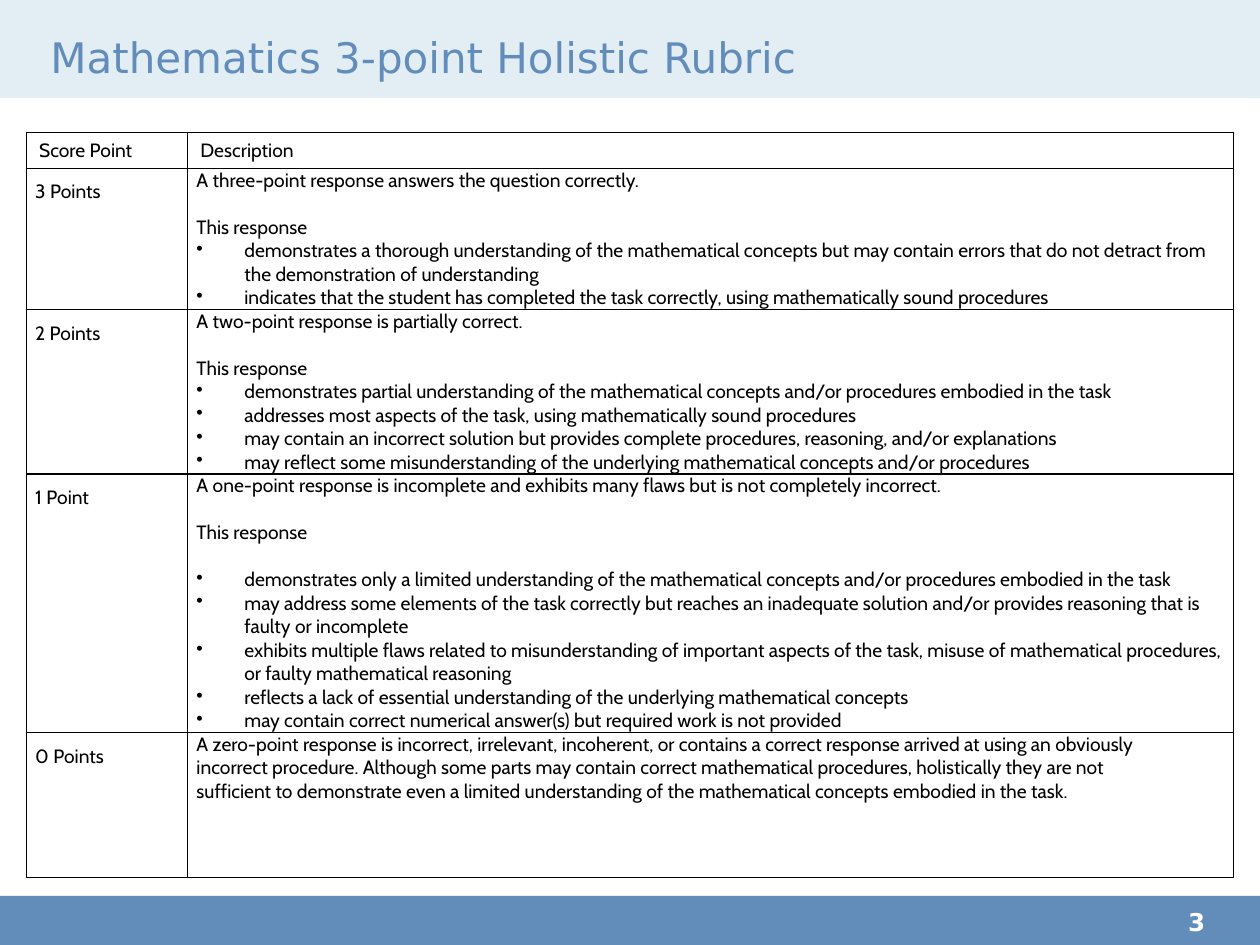
from lxml.etree import SubElement
from pptx import Presentation
from pptx.dml.color import RGBColor
from pptx.enum.shapes import MSO_SHAPE
from pptx.enum.text import MSO_ANCHOR as Anchor, PP_ALIGN as Align
from pptx.oxml.ns import qn
from pptx.util import Inches, Pt

BLUE = RGBColor(0x62, 0x8D, 0xBB)
PALE = RGBColor(0xE3, 0xED, 0xF4)
WHITE = RGBColor(0xFF, 0xFF, 0xFF)
BLACK = RGBColor(0x00, 0x00, 0x00)

COLUMN_WIDTHS = [12.8, 83]
ROW_HEIGHTS = [2.8, 11.1, 12.9, 19.6, 11.5]
HEADINGS = ["Score Point", "Description"]
LEAD_IN = "This response"
LEVELS = [
    ("3 Points", "A three-point response answers the question correctly.", False, [
        "demonstrates a thorough understanding of the mathematical concepts but may contain errors "
        "that do not detract from the demonstration of understanding",
        "indicates that the student has completed the task correctly, using mathematically sound procedures",
    ]),
    ("2 Points", "A two-point response is partially correct.", False, [
        "demonstrates partial understanding of the mathematical concepts and/or procedures embodied in the task",
        "addresses most aspects of the task, using mathematically sound procedures",
        "may contain an incorrect solution but provides complete procedures, reasoning, and/or explanations",
        "may reflect some misunderstanding of the underlying mathematical concepts and/or procedures",
    ]),
    ("1 Point", "A one-point response is incomplete and exhibits many flaws but is not completely incorrect.", True, [
        "demonstrates only a limited understanding of the mathematical concepts and/or procedures "
        "embodied in the task",
        "may address some elements of the task correctly but reaches an inadequate solution and/or "
        "provides reasoning that is faulty or incomplete",
        "exhibits multiple flaws related to misunderstanding of important aspects of the task, misuse "
        "of mathematical procedures, or faulty mathematical reasoning",
        "reflects a lack of essential understanding of the underlying mathematical concepts",
        "may contain correct numerical answer(s) but required work is not provided",
    ]),
]
ZERO_LINES = [
    "A zero-point response is incorrect, irrelevant, incoherent, or contains a correct response "
    "arrived at using an obviously",
    "incorrect procedure. Although some parts may contain correct mathematical procedures, "
    "holistically they are not",
    "sufficient to demonstrate even a limited understanding of the mathematical concepts "
    "embodied in the task.",
]


class RubricSlide:
    """Draws a scoring rubric on a grid of 100 columns by 75 rows."""

    title_font, body_font = "DejaVu Sans", "Cabin"
    body_size, blank_line, hang = 11, 13.4, 3.8

    def __init__(self, presentation):
        self.unit = presentation.slide_width / 100
        self.slide = presentation.slides.add_slide(presentation.slide_layouts[5])
        self.shapes = self.slide.shapes

    def grid(self, *lengths):
        return [round(length * self.unit) for length in lengths]

    def style(self, paragraph, font, size, color, bold=False):
        paragraph.font.name = font
        paragraph.font.size = Pt(size)
        paragraph.font.color.rgb = color
        paragraph.font.bold = bold

    def inset(self, target, left, top, right, bottom):
        (target.margin_left, target.margin_top,
         target.margin_right, target.margin_bottom) = self.grid(left, top, right, bottom)

    def band(self, top, height, color):
        shape = self.shapes.add_shape(MSO_SHAPE.RECTANGLE, *self.grid(0, top, 100, height))
        shape.shadow.inherit = False
        shape.fill.solid()
        shape.fill.fore_color.rgb = color
        shape.line.fill.background()

    def title(self, text, *box):
        shape = self.shapes.title
        self.shapes._spTree.append(shape._element)
        shape.left, shape.top, shape.width, shape.height = self.grid(*box)
        frame = shape.text_frame
        frame.text = text
        frame.vertical_anchor = Anchor.MIDDLE
        self.inset(frame, 0, 0, 1, 0.5)
        paragraph = frame.paragraphs[0]
        paragraph.alignment = Align.LEFT
        self.style(paragraph, self.title_font, 24, BLUE)

    def page_number(self, text, *box):
        frame = self.shapes.add_textbox(*self.grid(*box)).text_frame
        frame.word_wrap = True
        self.inset(frame, 0, 0, 0, 0)
        frame.text = text
        self.style(frame.paragraphs[0], self.title_font, 14, WHITE, True)

    def table(self, left, top):
        box = self.grid(left, top, sum(COLUMN_WIDTHS), sum(ROW_HEIGHTS))
        table = self.shapes.add_table(len(ROW_HEIGHTS), len(COLUMN_WIDTHS), *box).table
        table.first_row = table.horz_banding = False
        for column, width in zip(table.columns, self.grid(*COLUMN_WIDTHS)):
            column.width = width
        for row, height in zip(table.rows, self.grid(*ROW_HEIGHTS)):
            row.height = height
        for cell in table.iter_cells():
            self.borders(cell)
            cell.fill.background()
            self.inset(cell, 0.7, 0, 0.7, 0)
        return table

    def borders(self, cell):
        properties = cell._tc.get_or_add_tcPr()
        for side in ("a:lnL", "a:lnR", "a:lnT", "a:lnB"):
            line = SubElement(properties, qn(side), w=str(Pt(1)))
            fill = SubElement(line, qn("a:solidFill"))
            SubElement(fill, qn("a:srgbClr"), val=str(BLACK))

    def heading(self, cell, text):
        self.inset(cell, 1, 0.5, 1, 0.5)
        cell.vertical_anchor = Anchor.BOTTOM
        self.cell_text(cell, text)

    def cell_text(self, cell, text, gap=False, hanging=False, bullet=False, spacing=None):
        frame = cell.text_frame
        paragraph = frame.add_paragraph() if frame.text else frame.paragraphs[0]
        paragraph.text = text
        paragraph.line_spacing = spacing
        if gap:
            paragraph.space_before = Pt(self.blank_line)
        properties = paragraph._p.get_or_add_pPr()
        if hanging or bullet:
            indent, = self.grid(self.hang)
            properties.set("marL", str(indent))
            properties.set("indent", str(-indent))
        if bullet:
            SubElement(properties, qn("a:buChar"), char="•")
        self.style(paragraph, self.body_font, self.body_size, BLACK)


def main():
    presentation = Presentation()
    presentation.slide_width, presentation.slide_height = Inches(10), Inches(7.5)
    rubric = RubricSlide(presentation)
    rubric.band(71.1, 3.9, BLUE)
    rubric.band(0, 7.8, PALE)
    rubric.title("Mathematics 3-point Holistic Rubric", 4, 2.3, 90, 4.9)

    table = rubric.table(2.1, 10.5)
    for column, text in enumerate(HEADINGS):
        rubric.heading(table.cell(0, column), text)
    for row, (score, summary, open_list, points) in enumerate(LEVELS, start=1):
        rubric.cell_text(table.cell(row, 0), score, spacing=1.5)
        description = table.cell(row, 1)
        rubric.cell_text(description, summary)
        rubric.cell_text(description, LEAD_IN, gap=True)
        for index, point in enumerate(points):
            rubric.cell_text(description, point, gap=open_list and index == 0, bullet=True)
    rubric.cell_text(table.cell(4, 0), "0 Points", spacing=1.5)
    for line in ZERO_LINES:
        rubric.cell_text(table.cell(4, 1), line, hanging=True)

    rubric.page_number("3", 94.3, 72, 5.7, 3)
    presentation.save("out.pptx")


if __name__ == "__main__":
    main()
